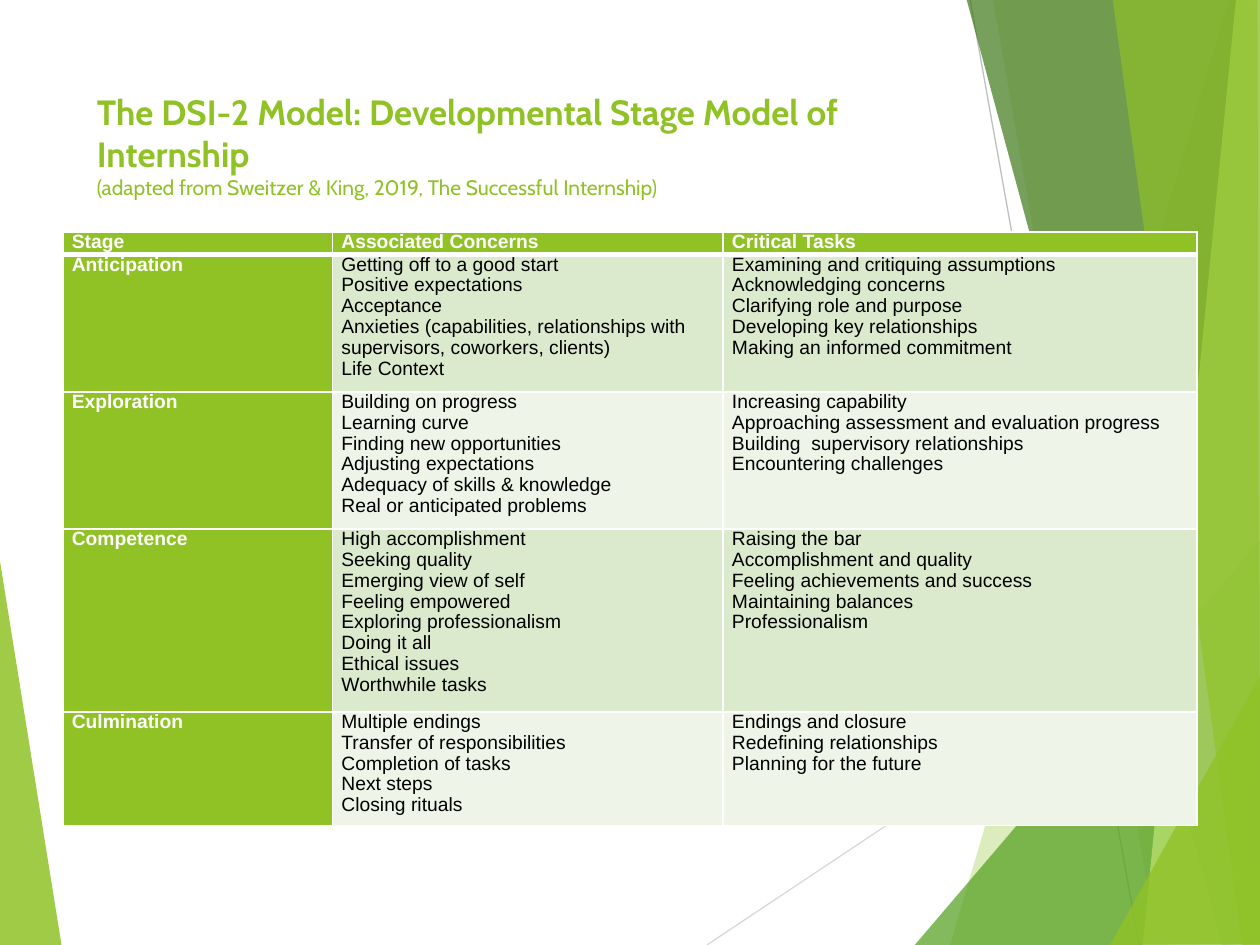
"""Build the slide on the developmental stage model of internship."""
from dataclasses import dataclass

import pptx
import pptx.dml.color
import pptx.enum.text
import pptx.oxml
import pptx.oxml.ns
import pptx.util
from pptx.util import Inches

LIME, WHITE, BLACK = "90C226", "FFFFFF", "000000"
BAND_FILLS = ("DBE9CD", "EEF4E8")
COLUMN_WIDTHS = (2.14, 3.1, 3.76)
HEADINGS = ("Stage", "Associated Concerns", "Critical Tasks")


@dataclass(frozen=True)
class Ribbon:
    points: tuple[tuple[float, float], ...]
    color: str
    opacity: int


@dataclass(frozen=True)
class Hairline:
    start: tuple[float, float]
    end: tuple[float, float]
    color: str


@dataclass(frozen=True)
class Stage:
    name: str
    height: float
    concerns: tuple[str, ...]
    tasks: tuple[str, ...]


DECORATIONS = (
    Ribbon(((-0.01, 4.39), (0.49, 7.51), (-0.01, 7.5)), LIME, 85),
    Hairline((5.61, 7.5), (10.01, 4.57), "D9D9D9"),
    Hairline((7.7, 0), (9.04, 7.5), "BFBFBF"),
    Ribbon(((9.75, 0), (7.54, 7.5), (10.02, 7.51), (10.01, 0.01)), LIME, 30),
    Ribbon(((7.88, -0.01), (9.19, 7.5), (10.01, 7.5), (10.01, -0.01)), LIME, 20),
    Ribbon(((7.26, 7.5), (10, 4.29), (10.01, 7.5)), "54A021", 72),
    Ribbon(((7.67, -0.01), (9.7, 7.5), (10.01, 7.49), (10.01, -0.01)), "3F7819", 70),
    Ribbon(((9.81, -0.01), (9.07, 7.5), (10.01, 7.5), (10, -0.01)), "C0E474", 70),
    Ribbon(((8.83, -0.01), (9.86, 7.5), (10, 7.5), (9.98, -0.01)), LIME, 65),
    Ribbon(((8.81, 7.5), (10.01, 5.35), (10.01, 7.49)), LIME, 80),
)

STAGES = (
    Stage("Anticipation", 1.09,
          ("Getting off to a good start", "Positive expectations", "Acceptance",
           "Anxieties (capabilities, relationships with supervisors, coworkers, clients)",
           "Life Context"),
          ("Examining and critiquing assumptions", "Acknowledging concerns",
           "Clarifying role and purpose", "Developing key relationships",
           "Making an informed commitment")),
    Stage("Exploration", 1.09,
          ("Building on progress", "Learning curve", "Finding new opportunities",
           "Adjusting expectations", "Adequacy of skills & knowledge",
           "Real or anticipated problems"),
          ("Increasing capability", "Approaching assessment and evaluation progress",
           "Building  supervisory relationships", "Encountering challenges")),
    Stage("Competence", 1.45,
          ("High accomplishment", "Seeking quality", "Emerging view of self",
           "Feeling empowered", "Exploring professionalism", "Doing it all",
           "Ethical issues", "Worthwhile tasks"),
          ("Raising the bar", "Accomplishment and quality",
           "Feeling achievements and success", "Maintaining balances", "Professionalism")),
    Stage("Culmination", 0.9,
          ("Multiple endings", "Transfer of responsibilities", "Completion of tasks",
           "Next steps", "Closing rituals"),
          ("Endings and closure", "Redefining relationships", "Planning for the future")),
)


def rgb(color: str) -> pptx.dml.color.RGBColor:
    return pptx.dml.color.RGBColor.from_string(color)


def apply_format(target, values: dict) -> None:
    for attribute, value in values.items():
        setattr(target, attribute, value)


def style_run(run, color: str, **values) -> None:
    apply_format(run.font, values)
    run.font.color.rgb = rgb(color)


def draw_ribbon(slide, ribbon: Ribbon) -> None:
    corners = [(Inches(x), Inches(y)) for x, y in ribbon.points]
    outline = slide.shapes.build_freeform(*corners[0], scale=1.0)
    outline.add_line_segments(corners[1:], close=True)
    band = outline.convert_to_shape()
    band.shadow.inherit = False
    band.line.fill.background()
    band.fill.solid()
    band.fill.fore_color.rgb = rgb(ribbon.color)
    tint = band.fill._xPr.find(".//" + pptx.oxml.ns.qn("a:srgbClr"))
    tint.append(pptx.oxml.parse_xml(
        f'<a:alpha {pptx.oxml.ns.nsdecls("a")} val="{ribbon.opacity * 1000}"/>'))


def draw_hairline(slide, hairline: Hairline) -> None:
    ends = [Inches(value) for value in hairline.start + hairline.end]
    stroke = slide.shapes.add_connector(pptx.enum.shapes.MSO_CONNECTOR.STRAIGHT, *ends)
    stroke.line.color.rgb = rgb(hairline.color)
    stroke.line.width = pptx.util.Pt(0.75)
    stroke._element.spPr.append(pptx.oxml.parse_xml(
        f'<a:effectLst {pptx.oxml.ns.nsdecls("a")}/>'))


def draw_title(slide) -> None:
    title = slide.shapes.add_textbox(
        Inches(0.67), Inches(0.67), Inches(6.94), Inches(1.44)).text_frame
    title.word_wrap = True
    line = title.paragraphs[0]
    heading = line.add_run()
    heading.text = "The DSI-2 Model: Developmental Stage Model of Internship"
    style_run(heading, LIME, name="Cabin", size=pptx.util.Pt(20), bold=True)
    line.add_line_break()
    citation = line.add_run()
    citation.text = "(adapted from Sweitzer & King, 2019, The Successful Internship)"
    style_run(citation, LIME, name="Cabin", size=pptx.util.Pt(12), bold=False)


def fill_cell(cell, lines: tuple[str, ...], fill: str, strong: bool,
              bottom: float = 1, top: float = 1) -> None:
    apply_format(cell, {"margin_left": Inches(0.07), "margin_right": Inches(0.07),
                        "margin_top": 0, "margin_bottom": 0})
    for side, width in {"L": 1, "R": 1, "T": top, "B": bottom}.items():
        cell._tc.get_or_add_tcPr().append(pptx.oxml.parse_xml(
            f'<a:ln{side} {pptx.oxml.ns.nsdecls("a")} w="{pptx.util.Pt(width)}">'
            f'<a:solidFill><a:srgbClr val="{WHITE}"/></a:solidFill></a:ln{side}>'))
    cell.fill.solid()
    cell.fill.fore_color.rgb = rgb(fill)
    cell.text = "\n".join(lines)
    for paragraph in cell.text_frame.paragraphs:
        paragraph.line_spacing = 0.97
        for run in paragraph.runs:
            style_run(run, WHITE if strong else BLACK, name="Arial",
                      size=pptx.util.Pt(11), bold=strong)


def draw_stage_table(slide) -> None:
    heights = [0.18] + [stage.height for stage in STAGES]
    stages = slide.shapes.add_table(
        len(heights), len(COLUMN_WIDTHS), Inches(0.5), Inches(1.84),
        Inches(sum(COLUMN_WIDTHS)), Inches(sum(heights))).table
    apply_format(stages, {"first_row": True, "first_col": True, "horz_banding": False})
    for column, width in zip(stages.columns, COLUMN_WIDTHS):
        column.width = Inches(width)
    for row, height in zip(stages.rows, heights):
        row.height = Inches(height)
    for column, heading in enumerate(HEADINGS):
        fill_cell(stages.cell(0, column), (heading,), LIME, True, bottom=3)
    for row, stage in enumerate(STAGES, start=1):
        band = BAND_FILLS[(row - 1) % 2]
        for column, lines in enumerate(((stage.name,), stage.concerns, stage.tasks)):
            fill_cell(stages.cell(row, column), lines, band if column else LIME,
                      column == 0, top=3 if row == 1 else 1)


def main() -> None:
    deck = pptx.Presentation()
    apply_format(deck, {"slide_width": Inches(10), "slide_height": Inches(7.5)})
    slide = deck.slides.add_slide(deck.slide_layouts[6])
    for decoration in DECORATIONS:
        if isinstance(decoration, Ribbon):
            draw_ribbon(slide, decoration)
        else:
            draw_hairline(slide, decoration)
    draw_title(slide)
    draw_stage_table(slide)
    deck.save("out.pptx")


if __name__ == "__main__":
    main()
